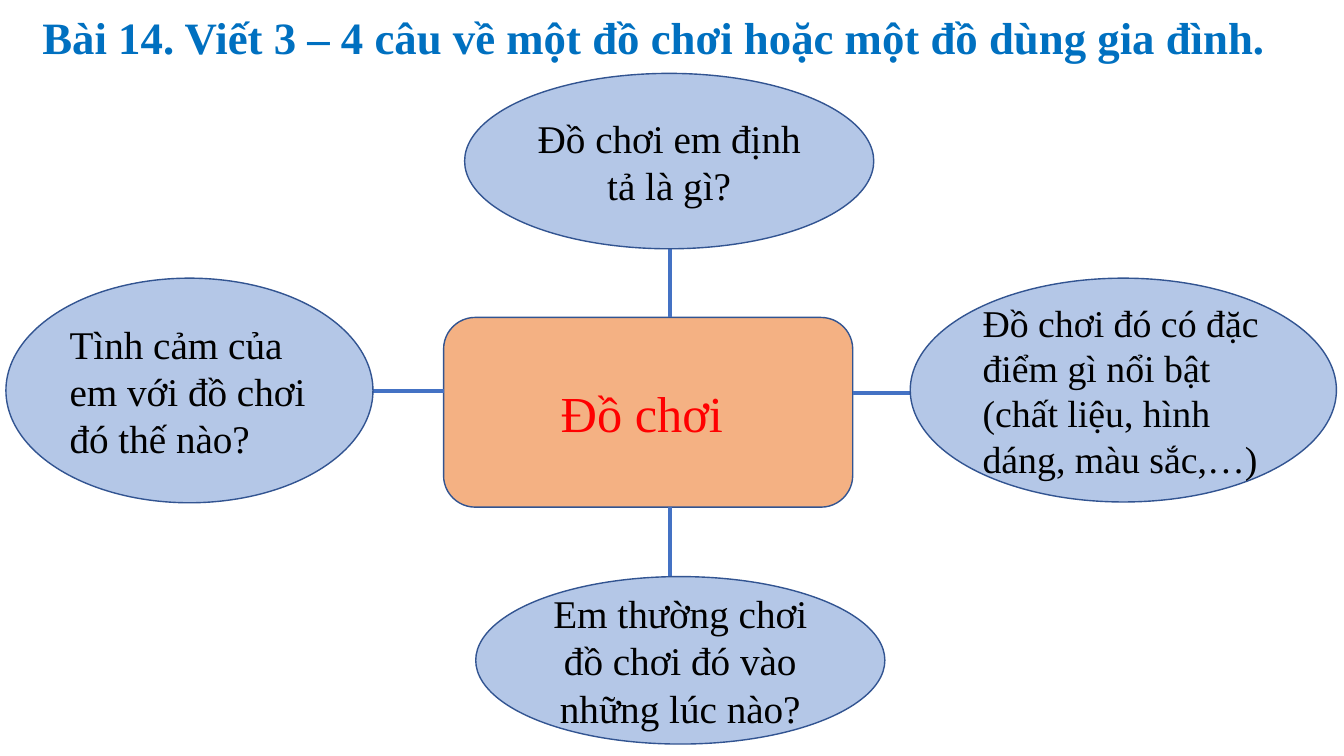
from pptx import Presentation, util as u
from pptx.dml.color import RGBColor
from pptx.enum import shapes, text
from pptx.oxml.ns import qn
from lxml import etree

TITLE_BLUE = RGBColor(0x00, 0x70, 0xC0)
RED = RGBColor(0xFF, 0x00, 0x00)
BLACK = RGBColor(0x00, 0x00, 0x00)
ORANGE = RGBColor(0xF4, 0xB1, 0x83)
PALE_BLUE = RGBColor(0xB4, 0xC7, 0xE7)
OUTLINE = RGBColor(0x32, 0x54, 0x91)
LINK_BLUE = RGBColor(0x44, 0x72, 0xC4)

CENTER, LEFT = text.PP_ALIGN.CENTER, text.PP_ALIGN.LEFT


class MindMap:
    font = "Times New Roman"

    def __init__(self, slide):
        self.s = slide

    def label(self, sp, words, size, color, bold=False, **para):
        tf = sp.text_frame
        frame = dict(word_wrap=True, auto_size=text.MSO_AUTO_SIZE.NONE,
                     vertical_anchor=text.MSO_ANCHOR.MIDDLE)
        p = tf.paragraphs[0]
        r = p.add_run()
        r.text = words
        r.font.color.rgb = color
        run = dict(name=self.font, size=u.Pt(size), bold=bold)
        for target, values in ((tf, frame), (p, para), (r.font, run)):
            for key, value in values.items():
                setattr(target, key, value)

    def title(self, words, box):
        sp = self.s.shapes.title
        for key, value in zip(("left", "top", "width", "height"), box):
            setattr(sp, key, u.Cm(value))
        self.label(sp, words, 32, TITLE_BLUE, True, alignment=CENTER,
                   line_spacing=0.9, space_before=u.Pt(0), space_after=u.Pt(6))

    def node(self, kind, words, box, fill, size=28, color=BLACK, align=CENTER):
        sp = self.s.shapes.add_shape(kind, *map(u.Cm, box))
        sp.shadow.inherit = False
        sp.fill.solid()
        sp.fill.fore_color.rgb = fill
        sp.line.color.rgb = OUTLINE
        sp.line.width = u.Pt(1)
        self.label(sp, words, size, color, alignment=align)

    def link(self, ends):
        c = self.s.shapes.add_connector(shapes.MSO_CONNECTOR.STRAIGHT, *map(u.Cm, ends))
        c.line.color.rgb = LINK_BLUE
        c.line.width = u.Pt(3)
        etree.SubElement(c._element.spPr, qn("a:effectLst"))


def main():
    prs = Presentation()
    prs.slide_width, prs.slide_height = u.Cm(33.87), u.Cm(19.05)
    m = MindMap(prs.slides.add_slide(prs.slide_layouts[5]))

    m.title("Bài 14. Viết 3 – 4 câu về một đồ chơi hoặc một đồ dùng gia đình.",
            (-1.6, -0.08, 36.17, 2.18))
    m.node(shapes.MSO_SHAPE.ROUNDED_RECTANGLE, "Đồ chơi ",
           (11.18, 8, 10.31, 4.78), ORANGE, 36, RED)

    questions = [
        ("Đồ chơi em định tả là gì?",
         (11.71, 1.85, 10.31, 4.42), (16.89, 8, 16.89, 5.82), 28, CENTER),
        ("Đồ chơi đó có đặc điểm gì nổi bật (chất liệu, hình dáng, màu sắc,…)",
         (22.94, 7.01, 10.74, 5.64), (21.49, 9.91, 24.61, 9.91), 27, LEFT),
        ("Em thường chơi đồ chơi đó vào những lúc nào?",
         (11.99, 14.53, 10.31, 4.22), (16.89, 14.94, 16.89, 12.78), 28, CENTER),
        ("Tình cảm của em với đồ chơi đó thế nào?",
         (0.15, 7.01, 9.25, 5.66), (8.08, 9.86, 11.18, 9.86), 28, LEFT),
    ]
    for words, box, ends, size, align in questions:
        m.link(ends)
        m.node(shapes.MSO_SHAPE.OVAL, words, box, PALE_BLUE, size, align=align)

    prs.save("out.pptx")


if __name__ == "__main__":
    main()
